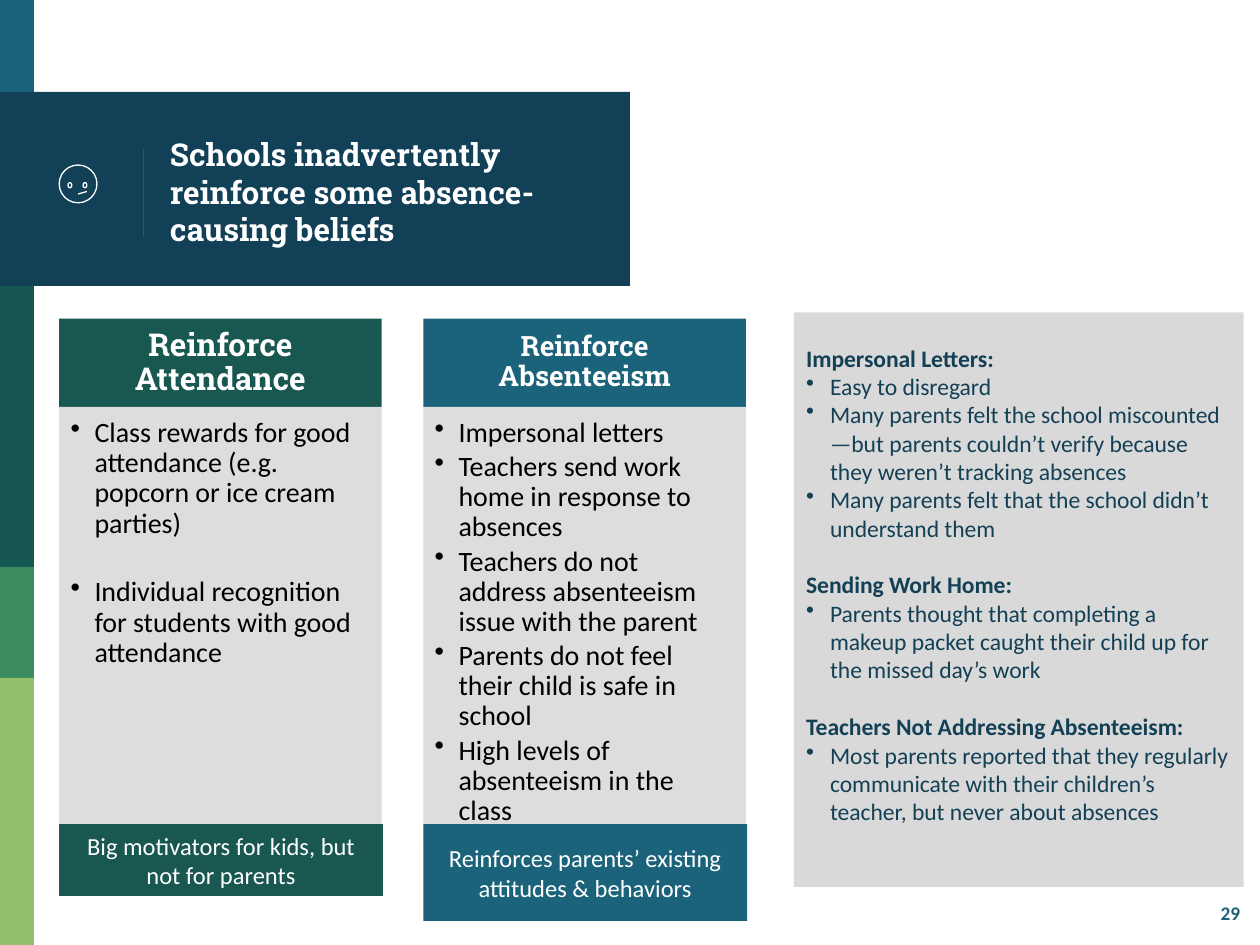
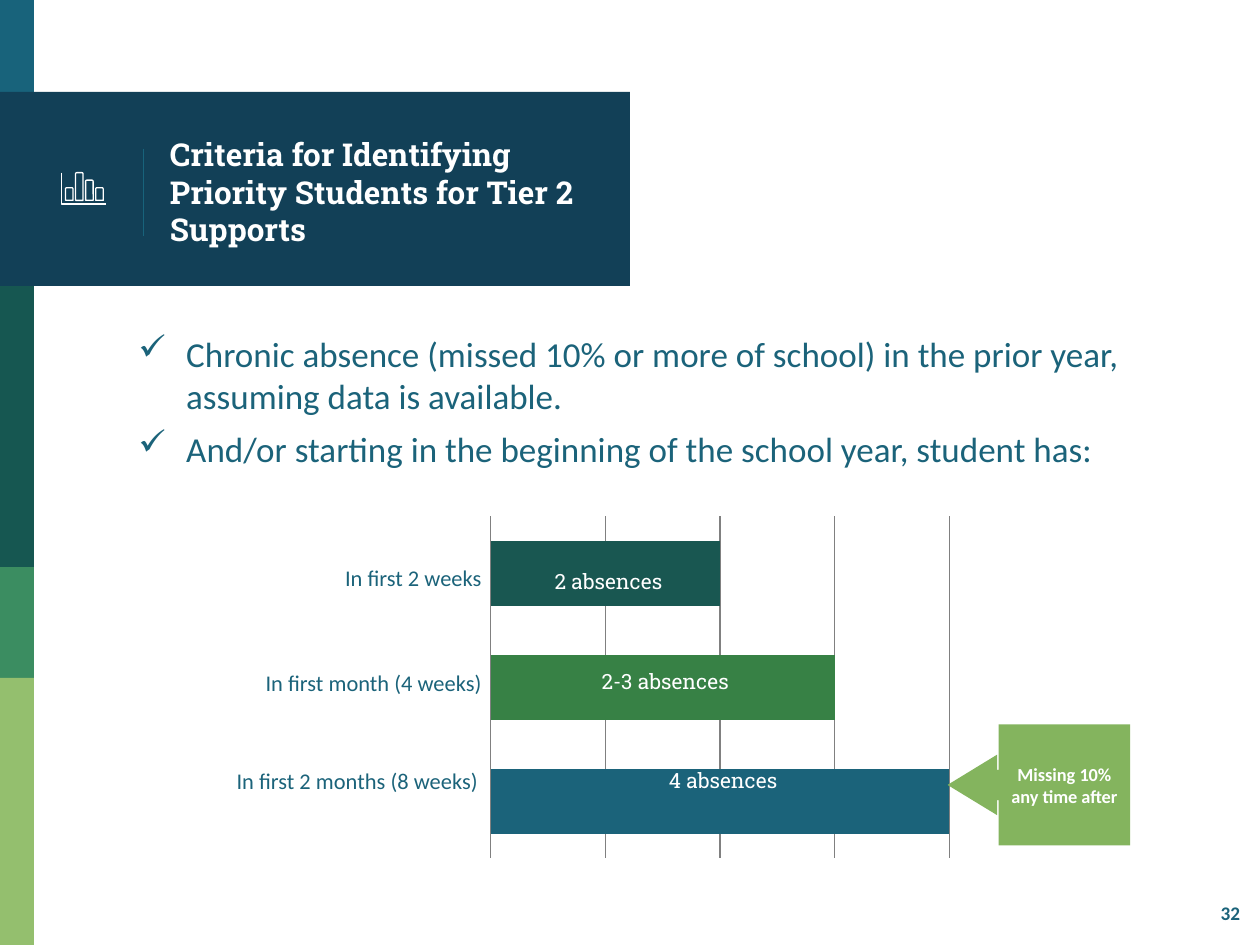
from pptx import Presentation
from pptx.chart.data import CategoryChartData
from pptx.dml.color import RGBColor
from pptx.enum.chart import XL_CHART_TYPE as CHART
from pptx.enum.shapes import MSO_CONNECTOR as CONN, MSO_SHAPE as SHAPE
from pptx.enum.text import MSO_ANCHOR as ANCHOR, PP_ALIGN as ALIGN
from pptx.oxml.ns import qn
from pptx.util import Inches, Pt
from lxml.etree import SubElement

COLORS = {
    "white": "FFFFFF", "black": "000000", "blue": "18637B", "navy": "124057",
    "deep": "165751", "mid": "3B8D61", "lime": "94BF6E", "teal": "1B637A",
    "forest": "195751", "leaf": "378145", "callout": "84B45E",
    "panel": "D9D9D9", "column": "DDDDDD", "ink": "144056", "grid": "808080",
}
BODY, HEAD = "Calibri", "Roboto Slab"
EDGE_BANDS = [(0, 0.77, "blue"), (2.27, 2.23, "deep"),
              (4.5, 0.88, "mid"), (5.38, 2.12, "lime")]


def rgb(name):
    """Return the palette colour with this name."""
    return RGBColor.from_string(COLORS[name])


def add_bullet(p, char, indent):
    """Give a paragraph a bullet and a hanging indent."""
    pPr = p._p.get_or_add_pPr()
    pPr.set("marL", str(Inches(indent)))
    pPr.set("indent", str(-Inches(indent)))
    SubElement(pPr, qn("a:buChar")).set("char", char)


def add_paragraph(p, text, size=14, font=BODY, color="white", bold=False,
                  align=ALIGN.LEFT, line=1.0, before=0, after=0,
                  bullet=None, indent=0.19):
    """Write formatted text into a paragraph."""
    p.alignment, p.line_spacing = align, line
    p.space_before, p.space_after = Pt(before), Pt(after)
    if bullet:
        add_bullet(p, bullet, indent)
    r = p.add_run()
    r.text = text
    r.font.size, r.font.name, r.font.bold = Pt(size), font, bold
    r.font.color.rgb = rgb(color)


def write(sp, items, anchor=ANCHOR.MIDDLE, insets=(0.1, 0.05, 0.1, 0.05), **fmt):
    """Fill a shape with strings or (string, overrides) pairs."""
    tf = sp.text_frame
    tf.word_wrap, tf.vertical_anchor = True, anchor
    tf.margin_left, tf.margin_top, tf.margin_right, tf.margin_bottom = map(Inches, insets)
    for i, item in enumerate([items] if isinstance(items, str) else items):
        text, extra = (item, {}) if isinstance(item, str) else item
        p = tf.add_paragraph() if i else tf.paragraphs[0]
        add_paragraph(p, text, **{**fmt, **extra})


def add_text(s, box, items, **fmt):
    """Add a text box."""
    sp = s.shapes.add_textbox(*map(Inches, box))
    write(sp, items, **fmt)


def add_block(s, box, color, kind=SHAPE.RECTANGLE):
    """Add a filled shape without an outline."""
    sp = s.shapes.add_shape(kind, *map(Inches, box))
    sp.shadow.inherit = False
    sp.fill.solid()
    sp.fill.fore_color.rgb = rgb(color)
    sp.line.fill.background()
    return sp


def set_stroke(sp, color="white"):
    """Leave a shape unfilled with a thin outline."""
    sp.shadow.inherit = False
    sp.fill.background()
    sp.line.color.rgb, sp.line.width = rgb(color), Pt(0.75)


def add_outline(s, kind, *box):
    """Add an outlined icon part."""
    sp = s.shapes.add_shape(kind, *map(Inches, box))
    set_stroke(sp)
    return sp


def add_line(s, x1, y1, x2, y2, color):
    """Add a thin straight line."""
    c = s.shapes.add_connector(CONN.STRAIGHT, *map(Inches, (x1, y1, x2, y2)))
    c.line.color.rgb, c.line.width = rgb(color), Pt(0.75)
    SubElement(c._element.spPr, qn("a:effectLst"))


def add_frame(prs, title, number):
    """Add a slide with edge bands, title band and page number."""
    s = prs.slides.add_slide(prs.slide_layouts[6])
    for top, height, color in EDGE_BANDS:
        add_block(s, (0, top, 0.27, height), color)
    add_block(s, (0, 0.73, 5, 1.54), "navy")
    add_line(s, 1.14, 1.18, 1.14, 1.87, "blue")
    add_text(s, (1.25, 0.77, 3.51, 1.5), title, insets=(0.1,) * 4,
             size=18, font=HEAD, bold=True)
    add_text(s, (9.59, 7.1, 0.4, 0.29), number, anchor=ANCHOR.TOP,
             size=11, color="teal", bold=True)
    return s


def add_face_icon(s):
    """Draw the doubtful face."""
    add_outline(s, SHAPE.OVAL, 0.47, 1.31, 0.3, 0.3)
    for left in (0.54, 0.66):
        add_outline(s, SHAPE.OVAL, left, 1.45, 0.03, 0.04)
    add_line(s, 0.62, 1.54, 0.69, 1.52, "white")


def add_bars_icon(s):
    """Draw the small bar chart icon."""
    points = [(Inches(x), Inches(y)) for x, y in ((0.49, 1.37), (0.49, 1.62), (0.84, 1.62))]
    fb = s.shapes.build_freeform(*points[0])
    fb.add_line_segments(points[1:], close=False)
    set_stroke(fb.convert_to_shape())
    for i, height in enumerate((0.1, 0.22, 0.16, 0.1)):
        add_outline(s, SHAPE.ROUND_2_SAME_RECTANGLE,
                    0.52 + 0.08 * i, 1.59 - height, 0.06, height)


def add_column(s, left, color, heading, size, items, note, note_height):
    """Add a column with a heading, bullets and a closing note."""
    write(add_block(s, (left, 2.53, 2.56, 0.7), color), heading,
          insets=(0.14, 0.08, 0.14, 0.08), size=size, font=HEAD, bold=True,
          align=ALIGN.CENTER, line=0.9)
    write(add_block(s, (left, 3.23, 2.56, 3.45), "column"), items,
          anchor=ANCHOR.TOP, insets=(0.09, 0.09, 0.12, 0.14), size=16,
          color="black", line=0.9, after=2.2, bullet="•")
    write(add_block(s, (left, 6.54, 2.57, note_height), color), note,
          align=ALIGN.CENTER)


def add_panel(s, sections):
    """Add the grey panel of headed bullet lists."""
    items = []
    for i, (heading, points) in enumerate(sections):
        items.append((heading, {"bold": True, "before": 16.3 if i else 0}))
        items += [(point, {"bullet": "•"}) for point in points]
    write(add_block(s, (6.3, 2.48, 3.57, 4.56), "panel"), items,
          insets=(0.1, 0.05, 0.1, 0.29), size=13.5, color="ink")


def add_absence_chart(s):
    """Add the horizontal bars with quarter gridlines."""
    data = CategoryChartData()
    data.categories = ["1", "2", "3"]
    data.add_series("Series 1", (100, 75, 50))
    box = map(Inches, (3.82, 4.04, 3.79, 2.83))
    chart = s.shapes.add_chart(CHART.BAR_STACKED, *box, data).chart
    chart.has_legend = chart.has_title = False
    chart.font.name, chart.font.size = BODY, Pt(18)
    chart.font.color.rgb = rgb("ink")
    chart.category_axis.visible = False
    axis = chart.value_axis
    axis.visible, axis.has_major_gridlines = False, True
    axis.minimum_scale, axis.maximum_scale, axis.major_unit = 0, 100, 25
    axis.major_gridlines.format.line.color.rgb = rgb("grid")
    axis.major_gridlines.format.line.width = Pt(0.75)
    plot = chart.plots[0]
    plot.gap_width, plot.overlap, plot.vary_by_categories = 75, 100, False
    for i, color in enumerate(("teal", "leaf", "forest")):
        fill = plot.series[0].points[i].format.fill
        fill.solid()
        fill.fore_color.rgb = rgb(color)


def build_beliefs(prs):
    """Build the slide on reinforced beliefs."""
    s = add_frame(prs, "Schools inadvertently reinforce some absence-causing beliefs", "29")
    add_face_icon(s)
    add_column(s, 0.47, "forest", "Reinforce Attendance", 18, [
        ("Class rewards for good attendance (e.g. popcorn or ice cream parties)",
         {"after": 22}),
        "Individual recognition for students with good attendance",
    ], "Big motivators for kids, but not for parents", 0.57)
    add_column(s, 3.36, "teal", "Reinforce Absenteeism", 16, [
        "Impersonal letters",
        "Teachers send work home in response to absences",
        "Teachers do not address absenteeism issue with the parent",
        "Parents do not feel their child is safe in school",
        "High levels of absenteeism in the class",
    ], "Reinforces parents’ existing attitudes & behaviors", 0.77)
    add_panel(s, [
        ("Impersonal Letters:", [
            "Easy to disregard",
            "Many parents felt the school miscounted—but parents couldn’t verify "
            "because they weren’t tracking absences",
            "Many parents felt that the school didn’t understand them"]),
        ("Sending Work Home:", [
            "Parents thought that completing a makeup packet caught their child up "
            "for the missed day’s work"]),
        ("Teachers Not Addressing Absenteeism:", [
            "Most parents reported that they regularly communicate with their "
            "children’s teacher, but never about absences"]),
    ])


def build_criteria(prs):
    """Build the slide on Tier 2 criteria."""
    s = add_frame(prs, "Criteria for Identifying Priority Students for Tier 2 Supports", "32")
    add_bars_icon(s)
    add_text(s, (1, 2.54, 8.84, 1.4), [
        "Chronic absence (missed 10% or more of school) in the prior year, "
        "assuming data is available.",
        "And/or starting in the beginning of the school year, student has:",
    ], anchor=ANCHOR.TOP, insets=(0.1,) * 4, size=20, color="teal", after=6,
        bullet="✓", indent=0.38)
    add_absence_chart(s)
    rows = [("In first 2 weeks", 3.92, 4.43, "2 absences", 4.13, 4.46),
            ("In first month (4 weeks)", 3.92, 5.26, "2-3 absences", 4.58, 5.26),
            ("In first 2 months (8 weeks)", 3.89, 6.04, "4 absences", 5.04, 6.04)]
    for period, right, top, count, left, count_top in rows:
        add_text(s, (right - 2.4, top, 2.4, 0.32), period, anchor=ANCHOR.TOP,
                 size=12.8, color="teal", align=ALIGN.RIGHT)
        add_text(s, (left, count_top, 1.4, 0.3), count, anchor=ANCHOR.TOP,
                 size=12, font=HEAD, align=ALIGN.CENTER)
    sp = add_block(s, (7.52, 5.75, 1.45, 0.96), "callout", SHAPE.LEFT_ARROW_CALLOUT)
    for i, value in enumerate((0.25, 0.25, 0.41, 0.72)):
        sp.adjustments[i] = value
    write(sp, "Missing 10% any time after", size=10.5, bold=True, align=ALIGN.CENTER)


def main():
    """Build and save the presentation."""
    prs = Presentation()
    prs.slide_width, prs.slide_height = Inches(10), Inches(7.5)
    build_beliefs(prs)
    build_criteria(prs)
    prs.save("out.pptx")


if __name__ == "__main__":
    main()
